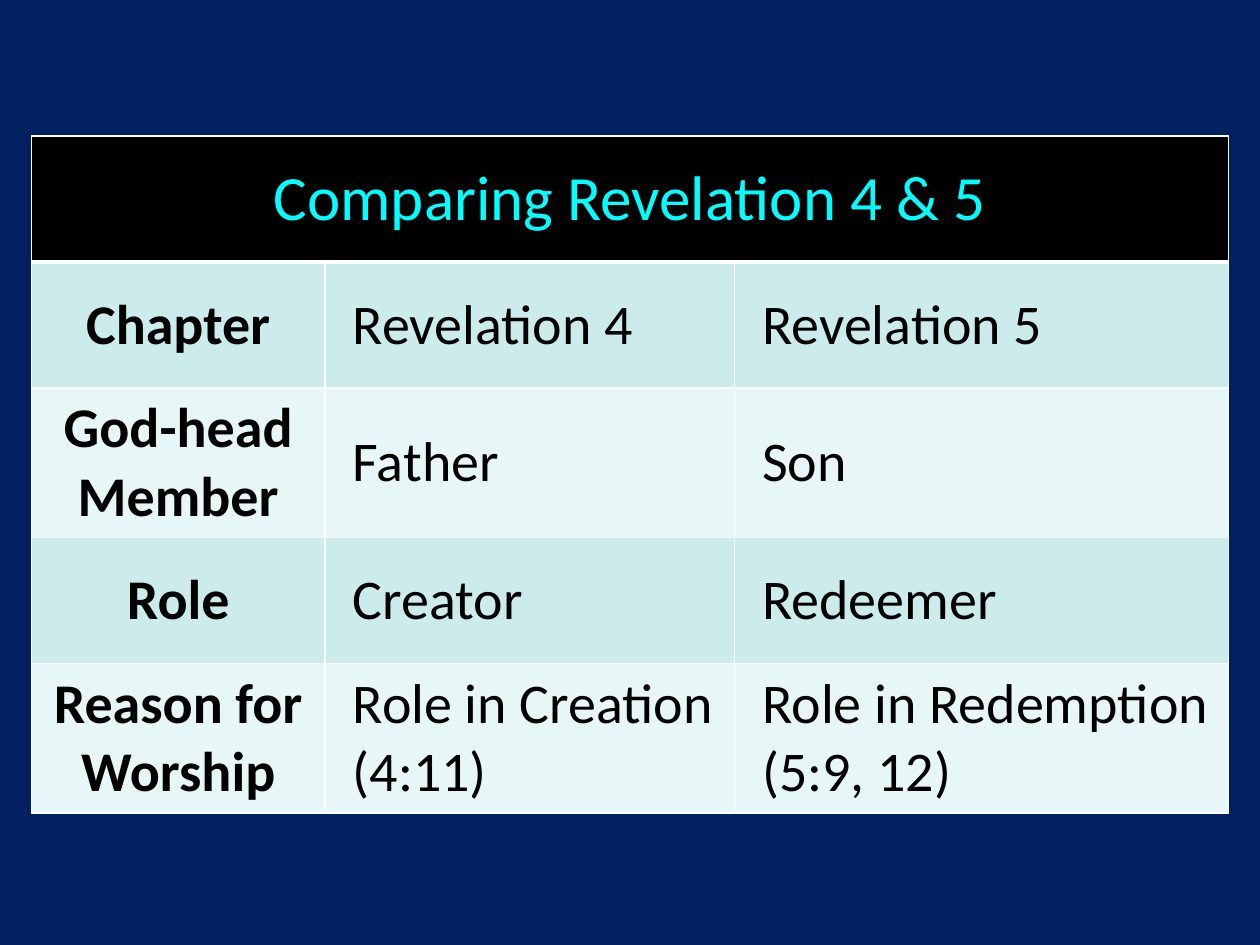
from typing import NamedTuple

from lxml import etree
from pptx import Presentation
from pptx.dml.color import RGBColor
from pptx.enum.text import MSO_ANCHOR, PP_ALIGN
from pptx.oxml.ns import qn
from pptx.util import Inches, Pt

MIDDLE = MSO_ANCHOR.MIDDLE
CENTER, LEFT = PP_ALIGN.CENTER, PP_ALIGN.LEFT
BLANK_LAYOUT = 6
FONT = "Calibri"
COLORS = {
    "background": "002060",
    "heading fill": "000000",
    "heading text": "00FFFF",
    "text": "000000",
    "odd row": "CCECEC",
    "even row": "E7F6F6",
    "border": "FFFFFF",
}
COLUMN_WIDTHS = (2.33, 3.25, 3.92)
ROW_HEIGHT = 1
HEADING = "Comparing Revelation 4 & 5"
THIN, THICK = 1, 3


class Comparison(NamedTuple):
    label: str
    chapter_four: str
    chapter_five: str


class CellStyle(NamedTuple):
    fill: str
    color: str = "text"
    size: int = 32
    bold: bool = False
    align: PP_ALIGN = LEFT
    indent: float = 0


COMPARISONS = (
    Comparison("Chapter", "Revelation 4", "Revelation 5"),
    Comparison("God-head Member", "Father", "Son"),
    Comparison("Role", "Creator", "Redeemer"),
    Comparison("Reason for Worship", "Role in Creation (4:11)", "Role in Redemption (5:9, 12)"),
)


def rgb(name: str) -> RGBColor:
    return RGBColor.from_string(COLORS[name])


def set_borders(cell, top: int, bottom: int) -> None:
    """Draw all four cell edges; must run before the cell gets its fill."""
    properties = cell._tc.get_or_add_tcPr()
    for side, width in (("L", THIN), ("R", THIN), ("T", top), ("B", bottom)):
        line = etree.SubElement(properties, qn(f"a:ln{side}"), w=str(Pt(width)))
        fill = etree.SubElement(line, qn("a:solidFill"))
        etree.SubElement(fill, qn("a:srgbClr"), val=COLORS["border"])


def write_cell(cell, text: str, style: CellStyle) -> None:
    cell.fill.solid()
    cell.fill.fore_color.rgb = rgb(style.fill)
    cell.vertical_anchor = MIDDLE
    cell.margin_left = cell.margin_right = Inches(0.09)
    cell.margin_top = cell.margin_bottom = Inches(0.05)
    cell.text = text
    para = cell.text_frame.paragraphs[0]
    para.alignment = style.align
    if style.indent:
        para_properties = para._p.get_or_add_pPr()
        para_properties.set("marL", str(Inches(style.indent)))
        para_properties.set("indent", "0")
    para.font.name = FONT
    para.font.size = Pt(style.size)
    para.font.bold = style.bold
    para.font.color.rgb = rgb(style.color)


def add_comparison_table(slide) -> None:
    row_count = len(COMPARISONS) + 1
    table = slide.shapes.add_table(
        row_count, len(COLUMN_WIDTHS), Inches(0.25), Inches(1.08),
        Inches(sum(COLUMN_WIDTHS)), Inches(row_count * ROW_HEIGHT),
    ).table
    for column, width in zip(table.columns, COLUMN_WIDTHS):
        column.width = Inches(width)
    for row_index, row in enumerate(table.rows):
        row.height = Inches(ROW_HEIGHT)
        for cell in row.cells:
            set_borders(
                cell,
                top=THICK if row_index == 1 else THIN,
                bottom=THICK if row_index == 0 else THIN,
            )

    heading = table.cell(0, 0)
    heading.merge(table.cell(0, len(COLUMN_WIDTHS) - 1))
    write_cell(heading, HEADING, CellStyle("heading fill", "heading text", 36, align=CENTER))

    for row_index, comparison in enumerate(COMPARISONS, start=1):
        fill = "odd row" if row_index % 2 else "even row"
        label_style = CellStyle(fill, bold=True, align=CENTER)
        value_style = CellStyle(fill, indent=0.13)
        for column_index, text in enumerate(comparison):
            style = value_style if column_index else label_style
            write_cell(table.cell(row_index, column_index), text, style)


def main() -> None:
    deck = Presentation()
    deck.slide_width, deck.slide_height = Inches(10), Inches(7.5)
    slide = deck.slides.add_slide(deck.slide_layouts[BLANK_LAYOUT])
    slide.background.fill.solid()
    slide.background.fill.fore_color.rgb = rgb("background")
    add_comparison_table(slide)
    deck.save("out.pptx")


if __name__ == "__main__":
    main()
